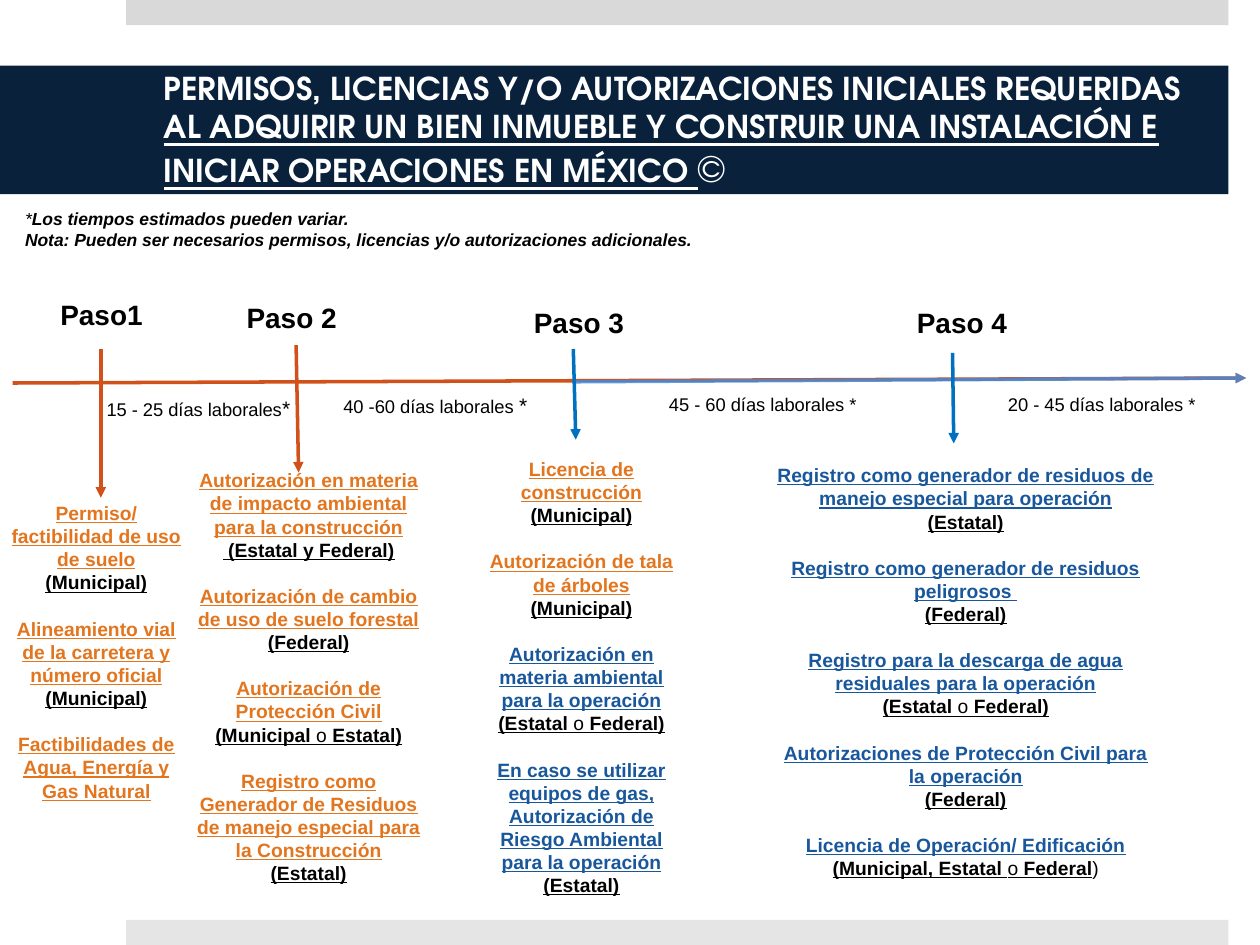
from lxml import etree
from pptx import Presentation
from pptx.dml.color import RGBColor
from pptx.enum.shapes import MSO_CONNECTOR, MSO_SHAPE
from pptx.enum.text import MSO_ANCHOR, MSO_AUTO_SIZE, PP_ALIGN
from pptx.oxml.ns import qn
from pptx.util import Inches, Pt

RECTANGLE = MSO_SHAPE.RECTANGLE
STRAIGHT = MSO_CONNECTOR.STRAIGHT
MIDDLE = MSO_ANCHOR.MIDDLE
GROW = MSO_AUTO_SIZE.SHAPE_TO_FIT_TEXT
LEFT, CENTER, RIGHT, JUSTIFY = (
    PP_ALIGN.LEFT, PP_ALIGN.CENTER, PP_ALIGN.RIGHT, PP_ALIGN.JUSTIFY)

NAVY, WHITE, BLACK = "09213B", "FFFFFF", "000000"
ORANGE, BLUE = "E2751D", "18579B"
RUST, SKY, PERIWINKLE = "D0511A", "0070C0", "3F8DE2"
BODY_FONT, TITLE_FONT = "Arial", "TeX Gyre Adventor"
PERMIT_GAP = 13.2  # one line of 11 pt text

# Heading and its box
STEPS = [
    ("Paso1 ", (0.32, 2.31, 0.91, 0.37)),
    ("Paso 2", (1.69, 2.34, 1.08, 0.37)),
    ("Paso 3", (4.06, 2.38, 0.99, 0.37)),
    ("Paso 4", (7.01, 2.38, 1.08, 0.37)),
]

# Text, asterisk size and box
DURATIONS = [
    ("15 - 25 días laborales", 12, (0.65, 3.09, 1.85, 0.3)),
    ("40 -60 días laborales ", 12, (2.53, 3.07, 1.85, 0.3)),
    ("45 - 60 días laborales ", 10.5, (5.13, 3.07, 1.85, 0.28)),
    ("20 - 45 días laborales ", 10.5, (7.85, 3.07, 1.79, 0.28)),
]

# Start, end, colour and opacity in percent
ARROWS = [
    ((0.1, 3.04), (9.89, 3), RUST, 100),
    ((4.57, 3.03), (9.89, 3), PERIWINKLE, 80),
    ((0.8, 2.77), (0.8, 3.95), RUST, 100),
    ((2.35, 2.74), (2.37, 3.75), RUST, 100),
    ((4.55, 2.77), (4.57, 3.49), SKY, 100),
    ((7.56, 2.8), (7.57, 3.52), SKY, 100),
]

# Per column: box and permits as (colour, name, authority parts).
# Authority parts alternate bold and regular; a name that ends in "|"
# shares its paragraph with the authority.
COLUMNS = [
    ((-0.01, 3.93, 1.55, 2.51), [
        (ORANGE, "Permiso/ factibilidad de uso de suelo", ["(Municipal)"]),
        (ORANGE, "Alineamiento vial de la carretera y número oficial",
         ["(Municipal)"]),
        (ORANGE, "Factibilidades de Agua, Energía y Gas Natural", []),
    ]),
    ((1.44, 3.67, 2.02, 3.43), [
        (ORANGE, "Autorización en materia de impacto ambiental para la "
         "construcción", [" (Estatal y Federal)"]),
        (ORANGE, "Autorización de cambio de uso de suelo forestal |",
         ["(Federal)"]),
        (ORANGE, "Autorización de Protección Civil",
         ["(Municipal", " o ", "Estatal)"]),
        (ORANGE, "Registro como Generador de Residuos de manejo especial "
         "para la Construcción", ["(Estatal)"]),
    ]),
    ((3.69, 3.58, 1.85, 3.99), [
        (ORANGE, "Licencia de construcción", ["(Municipal)"]),
        (ORANGE, "Autorización de tala de árboles", ["(Municipal)"]),
        (BLUE, "Autorización en materia ambiental para la operación |",
         ["(Estatal ", "o", " Federal)"]),
        (BLUE, "En caso se utilizar equipos de gas, Autorización de Riesgo "
         "Ambiental para la operación", ["(Estatal)"]),
    ]),
    ((6.06, 3.63, 3.21, 3.62), [
        (BLUE, "Registro como generador de residuos de manejo especial para "
         "operación", ["(Estatal)"]),
        (BLUE, "Registro como generador de residuos peligrosos ",
         ["(Federal)"]),
        (BLUE, "Registro para la descarga de agua residuales para la "
         "operación", ["(Estatal ", "o ", "Federal)"]),
        (BLUE, "Autorizaciones de Protección Civil para la operación",
         ["(Federal)"]),
        (BLUE, "Licencia de Operación/ Edificación",
         ["(Municipal, Estatal ", "o", " Federal", ")"]),
    ]),
]


def rgb(color):
    return RGBColor.from_string(color)


def add_bar(slide, box, color):
    bar = slide.shapes.add_shape(RECTANGLE, *map(Inches, box))
    bar.shadow.inherit = False
    bar.fill.solid()
    bar.fill.fore_color.rgb = rgb(color)
    bar.line.fill.background()
    return bar


def add_run(paragraph, text, size, color=BLACK, font=BODY_FONT,
            bold=False, italic=False, underline=False):
    run = paragraph.add_run()
    run.text = text
    run.font.name = font
    run.font.size = Pt(size)
    run.font.color.rgb = rgb(color)
    run.font.bold = bold
    run.font.italic = italic
    run.font.underline = underline


def add_text_box(slide, box):
    frame = slide.shapes.add_textbox(*map(Inches, box)).text_frame
    frame.word_wrap = True
    frame.auto_size = GROW
    return frame


def add_paragraph(frame, align, first):
    paragraph = frame.paragraphs[0] if first else frame.add_paragraph()
    paragraph.alignment = align
    return paragraph


def add_arrow(slide, start, end, color, opacity):
    arrow = slide.shapes.add_connector(
        STRAIGHT, *map(Inches, (*start, *end)))
    arrow.line.color.rgb = rgb(color)
    arrow.line.width = Pt(2)
    line = arrow.line._get_or_add_ln()
    if opacity < 100:
        tint = line.find(".//" + qn("a:srgbClr"))
        etree.SubElement(tint, qn("a:alpha"), val=str(opacity * 1000))
    etree.SubElement(line, qn("a:tailEnd"), type="triangle")
    etree.SubElement(arrow._element.spPr, qn("a:effectLst"))


def add_title(slide):
    banner = add_bar(slide, (0, 0.52, 9.75, 1.02), NAVY)
    frame = banner.text_frame
    frame.word_wrap = True
    frame.vertical_anchor = MIDDLE
    frame.margin_left, frame.margin_right = Inches(1.3), Inches(0.3)
    title = add_paragraph(frame, LEFT, True)
    add_run(title, "PERMISOS, LICENCIAS Y/O AUTORIZACIONES INICIALES "
            "REQUERIDAS ", 18, WHITE, TITLE_FONT, bold=True)
    add_run(title, "AL ADQUIRIR UN BIEN INMUEBLE Y CONSTRUIR UNA INSTALACIÓN "
            "E INICIAR OPERACIONES EN MÉXICO ", 18, WHITE, TITLE_FONT,
            bold=True, underline=True)
    add_run(title, "©", 21.6, WHITE, TITLE_FONT)


def add_notes_line(slide):
    frame = add_text_box(slide, (0.1, 1.6, 7.61, 0.44))
    estimate = add_paragraph(frame, JUSTIFY, True)
    add_run(estimate, "*", 10, italic=True)
    add_run(estimate, "Los tiempos estimados pueden variar.", 10,
            bold=True, italic=True)
    extra = add_paragraph(frame, JUSTIFY, False)
    add_run(extra, "Nota: Pueden ser necesarios permisos, licencias y/o "
            "autorizaciones adicionales.", 10, bold=True, italic=True)


def add_permits(slide, box, permits):
    frame = add_text_box(slide, box)
    for index, (color, name, authority) in enumerate(permits):
        paragraph = add_paragraph(frame, CENTER, index == 0)
        if index:
            paragraph.space_before = Pt(PERMIT_GAP)
        add_run(paragraph, name.rstrip("|"), 11, color,
                bold=True, underline=True)
        if authority and not name.endswith("|"):
            paragraph = add_paragraph(frame, CENTER, False)
        for part, text in enumerate(authority):
            add_run(paragraph, text, 11, bold=part % 2 == 0,
                    underline=text != ")")


def main():
    prs = Presentation()
    prs.slide_width, prs.slide_height = Inches(10), Inches(7.5)
    slide = prs.slides.add_slide(prs.slide_layouts[6])

    # Page bands, title and note
    add_bar(slide, (1, 0, 8.75, 0.2), "D9D9D9")
    add_bar(slide, (1, 7.3, 8.75, 0.2), "E5E5E5")
    add_title(slide)
    add_notes_line(slide)

    # Timeline
    for arrow in ARROWS:
        add_arrow(slide, *arrow)
    for heading, box in STEPS:
        step = add_paragraph(add_text_box(slide, box), RIGHT, True)
        add_run(step, heading, 16, bold=True)
    for days, star_size, box in DURATIONS:
        duration = add_paragraph(add_text_box(slide, box), CENTER, True)
        add_run(duration, days, 10.5)
        add_run(duration, "*", star_size)

    # Permits under each step
    for box, permits in COLUMNS:
        add_permits(slide, box, permits)

    prs.save("out.pptx")


if __name__ == "__main__":
    main()
